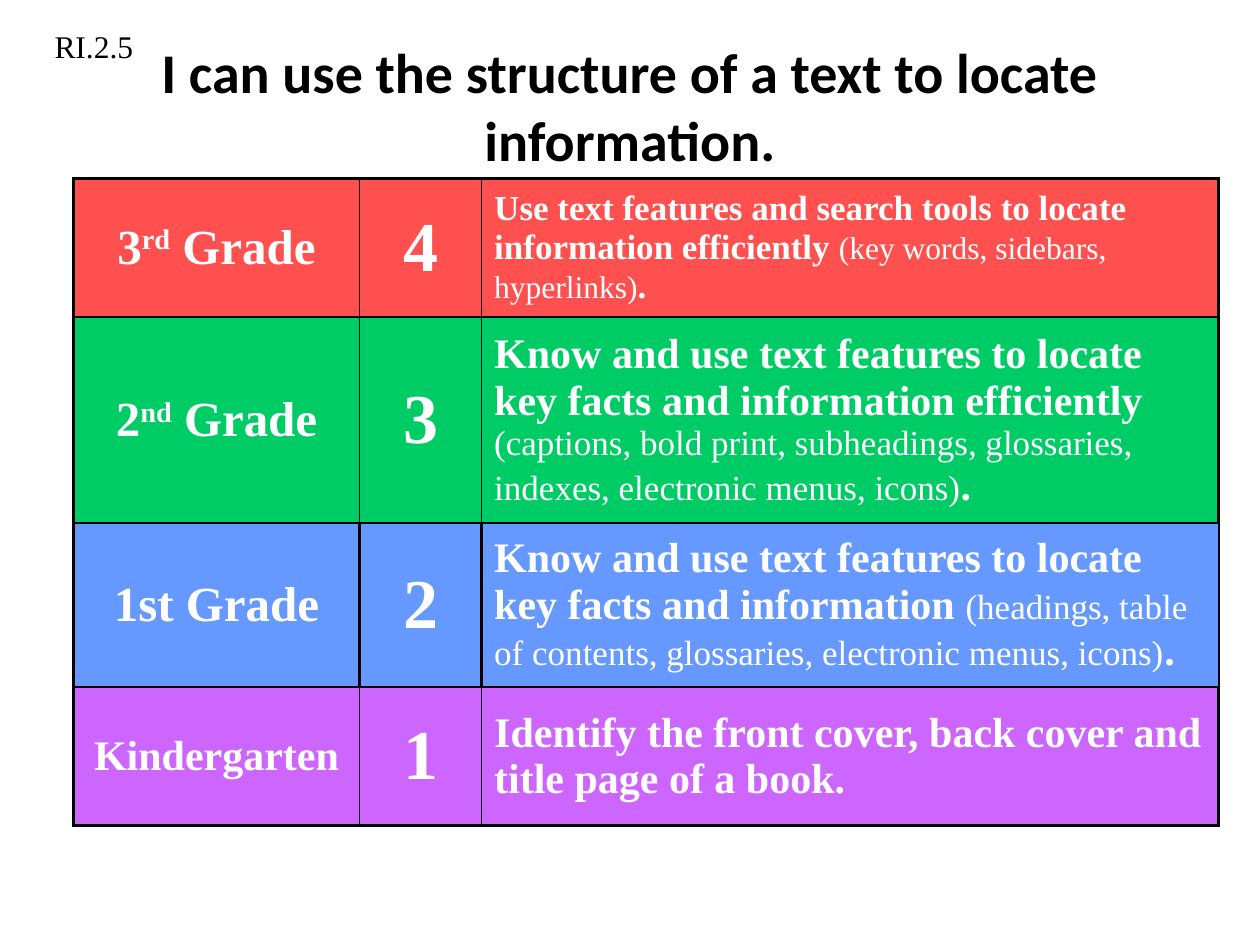
from dataclasses import dataclass
from typing import NamedTuple

from lxml.etree import SubElement
from pptx import Presentation
from pptx.dml.color import RGBColor
from pptx.enum.text import MSO_ANCHOR as Anchor, MSO_AUTO_SIZE as AutoSize, PP_ALIGN as Align
from pptx.oxml.ns import qn
from pptx.util import Cm, Pt

SERIF = "Times New Roman"
BLACK, WHITE = "000000", "FFFFFF"


class Run(NamedTuple):
    text: str
    size: float
    bold: bool = True
    raised: bool = False


class Edges(NamedTuple):
    """Border widths of one cell in points."""
    left: float
    right: float
    top: float
    bottom: float


@dataclass
class Level:
    fill: str
    height: float
    grade: list[Run]
    score: str
    goal: list[Run]
    edges: list[Edges]


LEVELS = [
    Level("FF5050", 2.79,
          [Run("3", 28), Run("rd", 28, raised=True), Run(" Grade", 28)], "4",
          [Run("Use text features and search tools to locate information efficiently ", 20),
           Run("(key words, sidebars, hyperlinks)", 18, False), Run(".", 20)],
          [Edges(2.25, 1, 2.25, 1.5), Edges(1, 1, 2.25, 1.5), Edges(1, 2.25, 2.25, 1.5)]),
    Level("00CC66", 3.3,
          [Run("2", 28), Run("nd", 28, raised=True), Run(" Grade", 28)], "3",
          [Run("Know and use text features to locate key facts and information efficiently ", 24),
           Run("(captions, bold print, subheadings, glossaries, indexes, electronic menus, icons)",
               20, False), Run(".", 24)],
          [Edges(2.25, 1, 1.5, 1), Edges(1, 1, 1.5, 1), Edges(1, 2.25, 1.5, 1.5)]),
    Level("6699FF", 2.79,
          [Run("1st Grade", 28)], "2",
          [Run("Know and use text features to locate key facts and information ", 24),
           Run("(headings, table of contents, glossaries, electronic menus, icons)", 20, False),
           Run(".", 24)],
          [Edges(2.25, 1.5, 1, 1), Edges(1.5, 1.5, 1, 1), Edges(1.5, 1.5, 1.5, 1.5)]),
    Level("CC66FF", 2.79,
          [Run("Kindergarten", 24)], "1",
          [Run("Identify the front cover, back cover and title page of a book.", 24)],
          [Edges(2.25, 1, 1, 1.5), Edges(1, 1, 1, 1.5), Edges(1, 2.25, 1.5, 1.5)]),
]
COLUMN_WIDTHS = [5.77, 2.46, 14.86]
COLUMN_ALIGNS = [Align.CENTER, Align.CENTER, Align.LEFT]


def color(value: str) -> RGBColor:
    return RGBColor.from_string(value)


def apply(target, formats: dict) -> None:
    for name, value in formats.items():
        setattr(target, name, value)


def write(frame, runs: list[Run], align, ink: str, font: str = SERIF) -> None:
    paragraph = frame.paragraphs[0]
    paragraph.alignment = align
    for part in runs:
        run = paragraph.add_run()
        run.text = part.text
        apply(run.font, {"name": font, "size": Pt(part.size), "bold": part.bold})
        run.font.color.rgb = color(ink)
        if part.raised:
            run.font._element.set("baseline", "30000")


def add_text(slide, box: tuple, runs: list[Run], align, font: str, formats: dict) -> None:
    frame = slide.shapes.add_textbox(*map(Cm, box)).text_frame
    apply(frame, {"word_wrap": True, **formats})
    write(frame, runs, align, BLACK, font)


def add_borders(cell, edges: Edges) -> None:
    properties = cell._tc.get_or_add_tcPr()
    for side, width in zip("LRTB", edges):
        line = SubElement(properties, qn(f"a:ln{side}"), w=str(Pt(width)))
        fill = SubElement(line, qn("a:solidFill"))
        SubElement(fill, qn("a:srgbClr"), val=BLACK)


def add_scale(slide) -> None:
    """Table of learning goals, one row per grade level."""
    holder = slide.shapes.add_table(len(LEVELS), len(COLUMN_WIDTHS),
                                    Cm(1.48), Cm(3.6), Cm(23.09), Cm(13.05))
    scale = holder.table
    apply(scale, {"first_row": False, "horz_banding": False})
    for column, width in zip(scale.columns, COLUMN_WIDTHS):
        column.width = Cm(width)
    for row, level in zip(scale.rows, LEVELS):
        row.height = Cm(level.height)
        contents = [level.grade, [Run(level.score, 40)], level.goal]
        for cell, runs, align, edges in zip(row.cells, contents, COLUMN_ALIGNS, level.edges):
            add_borders(cell, edges)
            cell.fill.solid()
            cell.fill.fore_color.rgb = color(level.fill)
            cell.vertical_anchor = Anchor.MIDDLE
            write(cell.text_frame, runs, align, WHITE)
    holder.height = Cm(13.05)


def main() -> None:
    deck = Presentation()
    apply(deck, {"slide_width": Cm(25.4), "slide_height": Cm(19.05)})
    slide = deck.slides.add_slide(deck.slide_layouts[6])
    add_text(slide, (0.85, 0.85, 23.7, 2.54),
             [Run("I can use the structure of a text to locate information.", 32)],
             Align.CENTER, "Calibri", {"vertical_anchor": Anchor.MIDDLE})
    add_scale(slide)
    add_text(slide, (0.85, 0.42, 3.6, 1.02), [Run("RI.2.5", 18, False)],
             Align.LEFT, SERIF, {"auto_size": AutoSize.SHAPE_TO_FIT_TEXT})
    deck.save("out.pptx")


if __name__ == "__main__":
    main()
